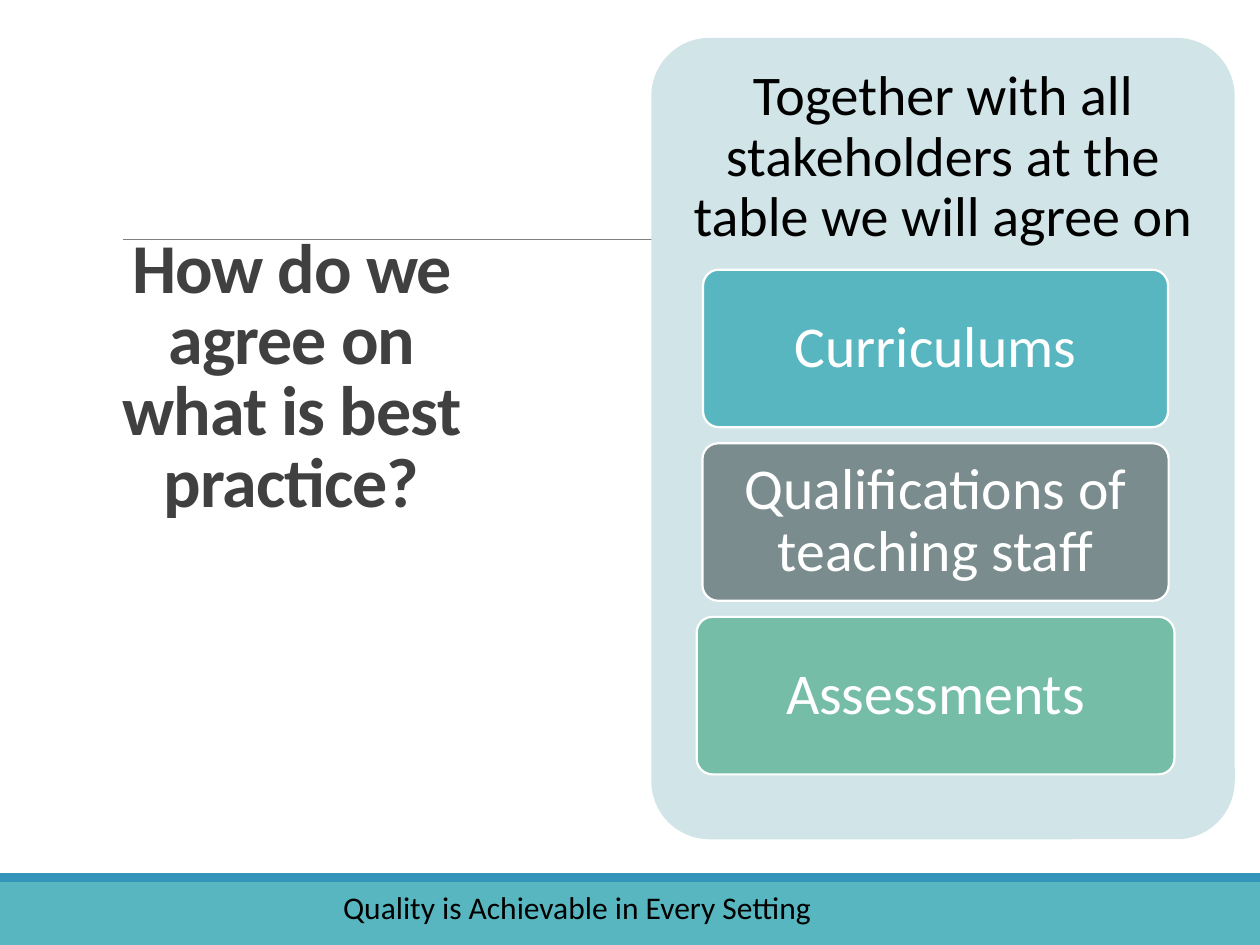
from dataclasses import dataclass
from typing import NamedTuple

from lxml.etree import SubElement
from pptx import Presentation
from pptx.dml.color import RGBColor as Color
from pptx.enum.shapes import MSO_CONNECTOR as Connector, MSO_SHAPE as Shape
from pptx.enum.text import MSO_ANCHOR as Anchor, PP_ALIGN as Align
from pptx.oxml.ns import qn
from pptx.util import Pt


class Box(NamedTuple):
    left: float
    top: float
    width: float
    height: float

    def points(self):
        return [Pt(value) for value in self]


@dataclass(frozen=True)
class Theme:
    font: str = "Calibri"
    teal: str = "58B6C0"
    blue: str = "3494BA"
    pale: str = "D1E5E8"
    slate: str = "7A8C8E"
    green: str = "75BDA7"
    rule: str = "808080"
    heading: str = "404040"
    dark: str = "000000"
    light: str = "FFFFFF"
    heading_size: float = 40
    intro_size: float = 32
    topic_size: float = 33
    footer_size: float = 18


THEME = Theme()


def add_block(page, box, fill, kind=Shape.RECTANGLE, border=None):
    block = page.shapes.add_shape(kind, *box.points())
    block.shadow.inherit = False
    block.fill.solid()
    block.fill.fore_color.rgb = Color.from_string(fill)
    if kind == Shape.ROUNDED_RECTANGLE:
        block.adjustments[0] = 0.1
    if border:
        block.line.color.rgb = Color.from_string(border)
        block.line.width = Pt(1.25)
    else:
        block.line.fill.background()
    return block


def write(shape, text, size, color, spacing=1, insets=(7.2, 3.6, 7.2, 3.6),
          anchor=Anchor.MIDDLE):
    frame = shape.text_frame
    frame.word_wrap = True
    frame.vertical_anchor = anchor
    (frame.margin_left, frame.margin_top,
     frame.margin_right, frame.margin_bottom) = [Pt(inset) for inset in insets]
    para = frame.paragraphs[0]
    para.alignment = Align.CENTER
    para.line_spacing = spacing
    span = para.add_run()
    span.text = text
    span.font.name = THEME.font
    span.font.size = Pt(size)
    span.font.color.rgb = Color.from_string(color)
    return span


def add_rule(page, left, right, top):
    rule = page.shapes.add_connector(
        Connector.STRAIGHT, Pt(left), Pt(top), Pt(right), Pt(top))
    rule.line.color.rgb = Color.from_string(THEME.rule)
    rule.line.width = Pt(0.5)
    SubElement(rule.element.spPr, qn("a:effectLst"))


def add_heading(page, box):
    heading = page.shapes.add_textbox(*box.points())
    span = write(heading, "How do we agree on what is best practice?",
                 THEME.heading_size, THEME.heading, 0.85, (7.2, 3.6, 7.2, 44.4))
    span.font.bold = True
    span.font._element.set("spc", "-50")


def add_panel(page, box):
    add_block(page, box, THEME.pale, Shape.ROUNDED_RECTANGLE)
    intro = page.shapes.add_textbox(*box._replace(height=box.height * 0.3).points())
    write(intro, "Together with all stakeholders at the table we will agree on",
          THEME.intro_size, THEME.dark, 0.9, (9.4, 9.4, 9.4, 9.4))
    topics = [
        ("Curriculums", THEME.teal, 265.7),
        ("Qualifications of teaching staff", THEME.slate, 266.4),
        ("Assessments", THEME.green, 273),
    ]
    center = box.left + 162.4
    for row, (label, fill, width) in enumerate(topics):
        place = Box(center - width / 2, box.top + 132.5 + row * 99.2, width, 90)
        card = add_block(page, place, fill, Shape.ROUNDED_RECTANGLE, THEME.light)
        write(card, label, THEME.topic_size, THEME.light, 0.9, (9, 7.5, 9, 7.5))


def add_footer(page, box):
    add_block(page, box, THEME.teal)
    add_block(page, Box(box.left, box.top - 5, box.width, 5), THEME.blue)
    motto = page.shapes.add_textbox(
        *Box(box.left + 149.8, box.top, 360, 29).points())
    write(motto, "Quality is Achievable in Every Setting",
          THEME.footer_size, THEME.dark, anchor=Anchor.TOP)


def main():
    deck = Presentation()
    deck.slide_width, deck.slide_height = Pt(720), Pt(540)
    page = deck.slides.add_slide(deck.slide_layouts[6])
    add_footer(page, Box(0, 504, 720, 36))
    add_rule(page, 70.5, 659, 136.8)
    add_heading(page, Box(55.4, 76.3, 222.5, 321.1))
    add_panel(page, Box(372.2, 21.6, 333.4, 458))
    deck.save("out.pptx")


if __name__ == "__main__":
    main()
